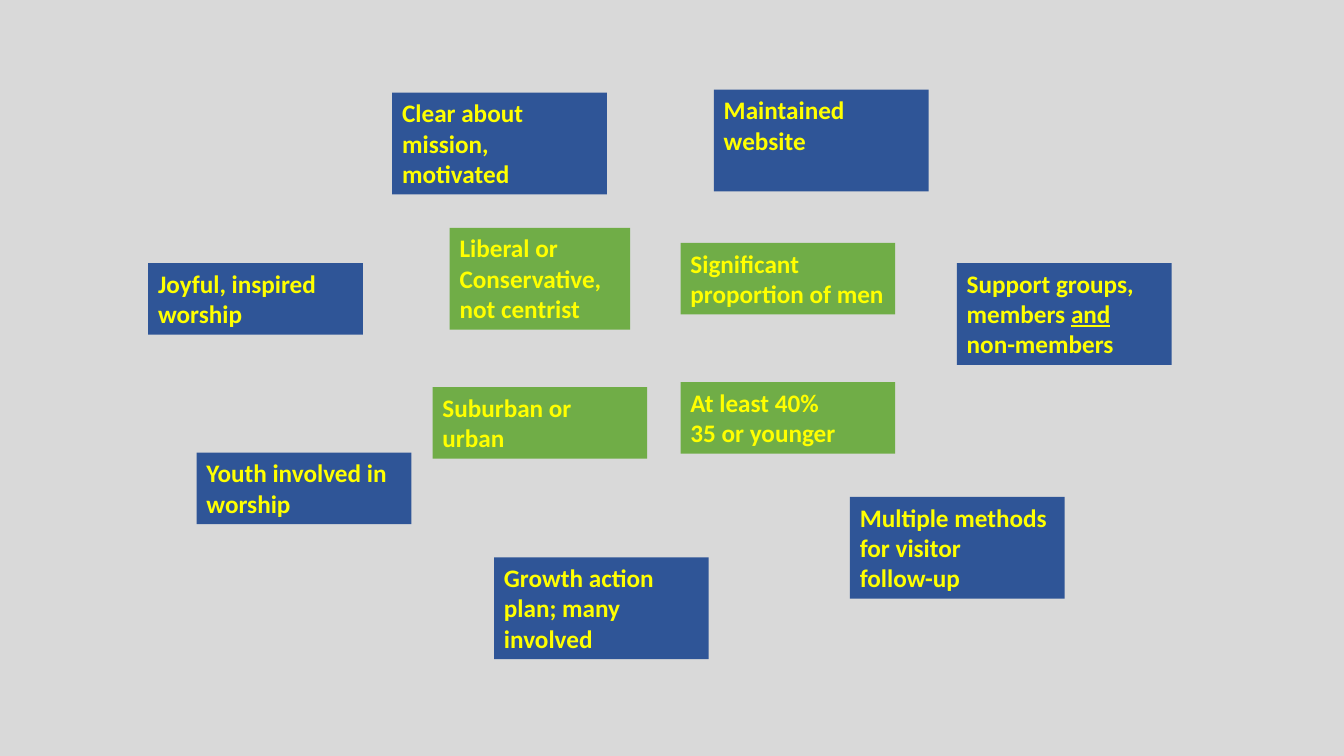
"""Build a slide of growth factors: green context boxes ringed by blue action boxes."""
from dataclasses import dataclass

from pptx import Presentation
from pptx.dml.color import RGBColor
from pptx.enum import shapes, text
from pptx.slide import Slide
from pptx.util import Inches, Pt


@dataclass(frozen=True)
class Theme:
    background: RGBColor = RGBColor.from_string("D9D9D9")
    context: RGBColor = RGBColor.from_string("70AD47")
    action: RGBColor = RGBColor.from_string("2F5597")
    lettering: RGBColor = RGBColor.from_string("FFFF00")
    font: str = "Calibri"
    size: int = 18


@dataclass(frozen=True)
class Factor:
    wording: str
    left: float
    top: float
    fill: RGBColor
    lines: int = 2
    width: float = 2.13
    underlined: str = ""
    grows: bool = True


THEME = Theme()
BOX_HEIGHTS = {2: 0.71, 3: 1.01}

FACTORS = (
    Factor("Liberal or Conservative,\nnot centrist", 4.46, 2.26, THEME.context, 3, width=1.79),
    Factor("At least 40%\n35 or younger", 6.75, 3.79, THEME.context),
    Factor("Clear about mission, motivated", 3.89, 0.92, THEME.action, 3),
    Factor("Significant proportion of men", 6.75, 2.41, THEME.context),
    Factor("Joyful, inspired worship", 1.47, 2.61, THEME.action),
    Factor("Youth involved in worship", 1.95, 4.49, THEME.action),
    Factor("Growth action plan; many involved", 4.9, 5.53, THEME.action, 3),
    Factor("Multiple methods for visitor\nfollow-up", 8.43, 4.93, THEME.action, 3),
    Factor("Support groups, members and non-members", 9.49, 2.61, THEME.action, 3,
           underlined="and"),
    Factor("Maintained website", 7.08, 0.89, THEME.action, 3, grows=False),
    Factor("Suburban or urban", 4.29, 3.84, THEME.context),
)


def split_spans(wording: str, underlined: str) -> list[str]:
    """Split the wording around its underlined part, if it has one."""
    if not underlined:
        return [wording]
    return [part for part in wording.partition(underlined) if part]


def draw_factor(page: Slide, factor: Factor) -> None:
    """Draw one filled box with its left-aligned wording."""
    box = page.shapes.add_shape(
        shapes.MSO_SHAPE.RECTANGLE, Inches(factor.left), Inches(factor.top),
        Inches(factor.width), Inches(BOX_HEIGHTS[factor.lines]))
    box.shadow.inherit = False
    box.fill.solid()
    box.fill.fore_color.rgb = factor.fill
    box.line.fill.background()

    frame = box.text_frame
    frame.word_wrap = True
    frame.vertical_anchor = text.MSO_ANCHOR.TOP
    frame.auto_size = (text.MSO_AUTO_SIZE.SHAPE_TO_FIT_TEXT if factor.grows
                       else text.MSO_AUTO_SIZE.NONE)
    frame.text = factor.wording
    for para in frame.paragraphs:
        para.alignment = text.PP_ALIGN.LEFT
        spans = split_spans(para.text, factor.underlined)
        para.text = spans[0]
        for rest in spans[1:]:
            para.add_run().text = rest
        for span in para.runs:
            span.font.name = THEME.font
            span.font.size = Pt(THEME.size)
            span.font.bold = True
            span.font.color.rgb = THEME.lettering
            if span.text == factor.underlined:
                span.font.underline = True


def main() -> None:
    """Create the deck, draw every factor and save it."""
    deck = Presentation()
    deck.slide_width, deck.slide_height = Inches(13.33), Inches(7.5)
    page = deck.slides.add_slide(deck.slide_layouts[6])
    page.background.fill.solid()
    page.background.fill.fore_color.rgb = THEME.background
    for factor in FACTORS:
        draw_factor(page, factor)
    deck.save("out.pptx")


if __name__ == "__main__":
    main()
